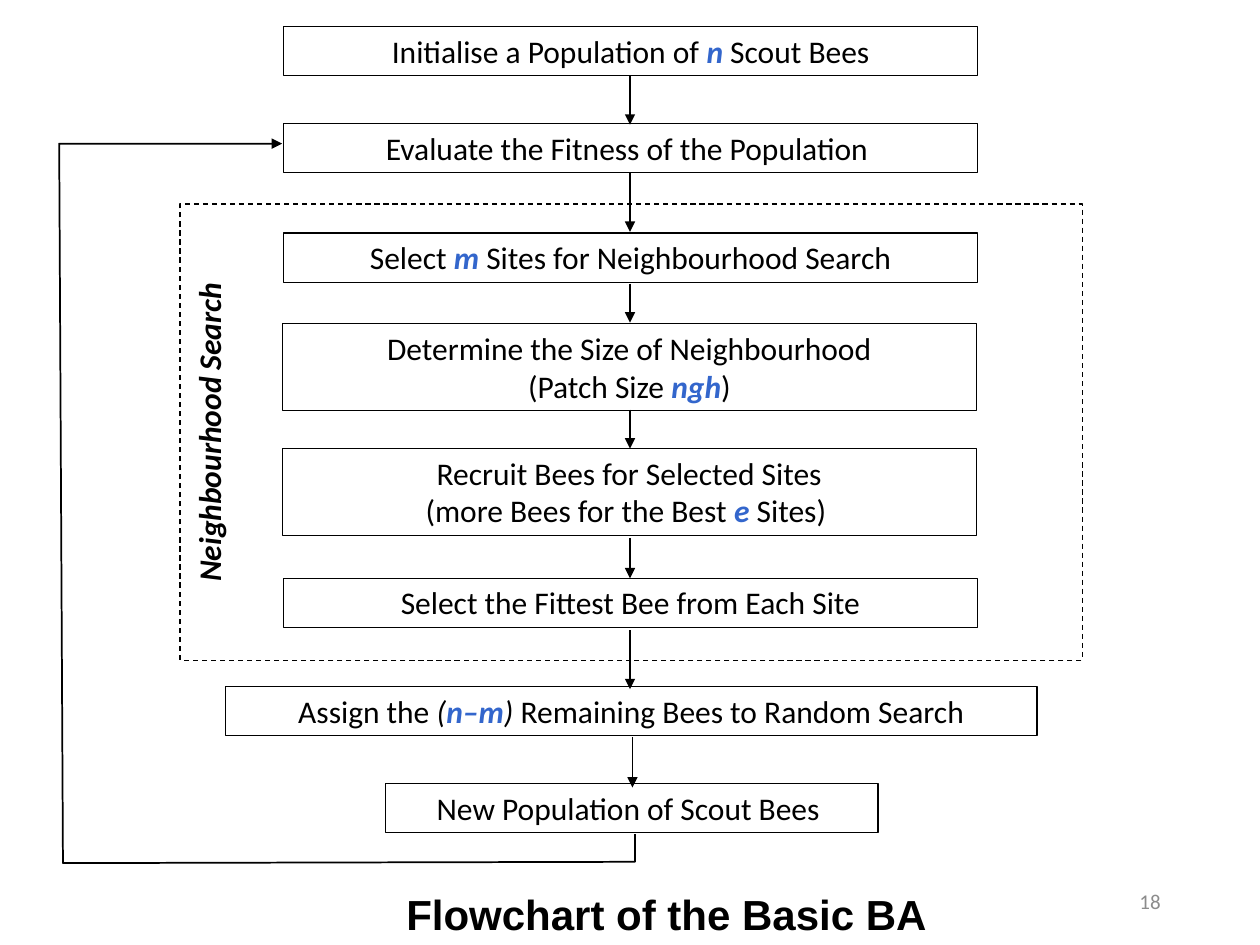
from lxml.etree import SubElement
from pptx import Presentation
from pptx.dml.color import RGBColor
from pptx.enum.dml import MSO_LINE
from pptx.enum.shapes import MSO_CONNECTOR, MSO_SHAPE
from pptx.enum.text import MSO_ANCHOR, MSO_AUTO_SIZE, PP_ALIGN
from pptx.oxml.ns import qn
from pptx.util import Inches, Pt

BLACK = RGBColor(0, 0, 0)
WHITE = RGBColor(255, 255, 255)
BLUE = RGBColor(0x33, 0x66, 0xCC)
GREY = RGBColor(0x8C, 0x8C, 0x8C)

# Run styles: colour, bold, italic
PLAIN = (BLACK, False, False)
ITALIC = (BLACK, False, True)
VARIABLE = (BLUE, True, True)

# Steps: left, top, width, height, lines of runs
STEPS = [
    (2.25, 0.21, 5.51, 0.39, [[("Initialise a Population of ", PLAIN), ("n", VARIABLE),
                               (" Scout Bees", PLAIN)]]),
    (2.25, 0.98, 5.51, 0.39, [[("Evaluate the Fitness of the Population ", PLAIN)]]),
    (2.25, 1.85, 5.51, 0.39, [[("Select ", PLAIN), ("m", VARIABLE),
                               (" Sites for Neighbourhood Search", PLAIN)]]),
    (2.24, 2.57, 5.51, 0.69, [[("Determine the Size of Neighbourhood", PLAIN)],
                              [("(Patch Size ", PLAIN), ("ngh", VARIABLE), (")", PLAIN)]]),
    (2.24, 3.56, 5.51, 0.69, [[("Recruit Bees for Selected Sites", PLAIN)],
                              [("(more Bees for the Best ", PLAIN), ("e", VARIABLE),
                               (" Sites) ", PLAIN)]]),
    (2.25, 4.59, 5.51, 0.39, [[("Select the Fittest Bee from Each Site", PLAIN)]]),
    (1.79, 5.45, 6.44, 0.39, [[("Assign the ", PLAIN), ("(", ITALIC), ("n–m", VARIABLE),
                               (")", ITALIC), (" Remaining Bees to Random Search", PLAIN)]]),
    (3.06, 6.22, 3.91, 0.39, [[("New Population of Scout Bees ", PLAIN)]]),
]

# Arrows between steps: x, top, bottom
ARROWS = [(5, 0.6, 0.99), (5, 1.37, 1.84), (5, 2.25, 2.56), (5, 3.25, 3.56),
          (5, 4.27, 4.59), (5, 5, 5.47), (5.02, 5.85, 6.25)]

LOOP = [(5.04, 6.62), (5.04, 6.84), (0.5, 6.85), (0.47, 1.14), (2.24, 1.14)]


def style_line(shape, width):
    shape.line.color.rgb = BLACK
    shape.line.width = Pt(width)


def add_arrowhead(shape):
    SubElement(shape.line._get_or_add_ln(), qn("a:tailEnd"), type="triangle")


def add_rect(s, left, top, width, height, fill=WHITE):
    sp = s.shapes.add_shape(MSO_SHAPE.RECTANGLE, Inches(left), Inches(top),
                            Inches(width), Inches(height))
    sp.shadow.inherit = False
    if fill is None:
        sp.fill.background()
    else:
        sp.fill.solid()
        sp.fill.fore_color.rgb = fill
    return sp


def add_step(s, left, top, width, height, lines):
    sp = add_rect(s, left, top, width, height)
    style_line(sp, 0.75)
    tf = sp.text_frame
    tf.margin_left = tf.margin_right = tf.margin_top = tf.margin_bottom = Inches(0.04)
    tf.vertical_anchor = MSO_ANCHOR.TOP
    tf.auto_size = MSO_AUTO_SIZE.SHAPE_TO_FIT_TEXT
    for i, line in enumerate(lines):
        p = tf.add_paragraph() if i else tf.paragraphs[0]
        p.alignment = PP_ALIGN.CENTER
        p.font.size = Pt(18)
        p.font.name = "Calibri"
        for text, (color, bold, italic) in line:
            r = p.add_run()
            r.text = text
            r.font.color.rgb = color
            r.font.bold = bold
            r.font.italic = italic


def add_arrow(s, x, top, bottom):
    c = s.shapes.add_connector(MSO_CONNECTOR.STRAIGHT, Inches(x), Inches(top),
                               Inches(x), Inches(bottom))
    style_line(c, 1)
    add_arrowhead(c)
    SubElement(c._element.spPr, qn("a:effectLst"))


def add_loop(s, points):
    start, *rest = [(Inches(x), Inches(y)) for x, y in points]
    builder = s.shapes.build_freeform(*start)
    builder.add_line_segments(rest, close=False)
    sp = builder.convert_to_shape()
    sp.shadow.inherit = False
    sp.fill.background()
    style_line(sp, 1)
    add_arrowhead(sp)


def set_text(sp, text, size, name, color, align):
    tf = sp.text_frame
    tf.word_wrap = True
    tf.vertical_anchor = MSO_ANCHOR.TOP
    p = tf.paragraphs[0]
    p.text = text
    p.alignment = align
    p.font.size = Pt(size)
    p.font.name = name
    p.font.color.rgb = color
    return p


def add_label(s, left, top, width, height, *text_style):
    sp = s.shapes.add_textbox(Inches(left), Inches(top), Inches(width), Inches(height))
    return sp, set_text(sp, *text_style)


def add_title(s):
    sp = add_rect(s, 2.16, 7, 5.84, 0.5)
    sp.line.fill.background()
    p = set_text(sp, "Flowchart of the Basic BA ", 24, "Arial", BLACK, PP_ALIGN.CENTER)
    sp.text_frame.auto_size = MSO_AUTO_SIZE.SHAPE_TO_FIT_TEXT
    p.font.bold = True
    p.level = 1
    p.space_before, p.space_after = Pt(12), Pt(3)
    pPr = p._p.get_or_add_pPr()
    pPr.set("marL", str(Inches(0.88)))
    pPr.set("indent", str(Inches(-0.38)))


def main():
    prs = Presentation()
    prs.slide_width, prs.slide_height = Inches(10), Inches(7.5)
    s = prs.slides.add_slide(prs.slide_layouts[6])

    # Slide number
    number, _ = add_label(s, 7.06, 6.95, 2.25, 0.4, "18", 12, "Calibri", GREY, PP_ALIGN.RIGHT)
    number.text_frame.vertical_anchor = MSO_ANCHOR.MIDDLE

    # Neighbourhood search frame
    frame = add_rect(s, 1.43, 1.62, 7.16, 3.62, fill=None)
    style_line(frame, 0.75)
    frame.line.dash_style = MSO_LINE.DASH

    # Steps, arrows and the loop back
    for step in STEPS:
        add_step(s, *step)
    add_loop(s, LOOP)
    for arrow in ARROWS:
        add_arrow(s, *arrow)

    # Side label and title
    side, p = add_label(s, 0, 3.23, 3.31, 0.4, "Neighbourhood Search", 18, "Calibri",
                        BLACK, PP_ALIGN.CENTER)
    side.rotation = 270
    p.font.bold = p.font.italic = True
    add_title(s)

    prs.save("out.pptx")


if __name__ == "__main__":
    main()
